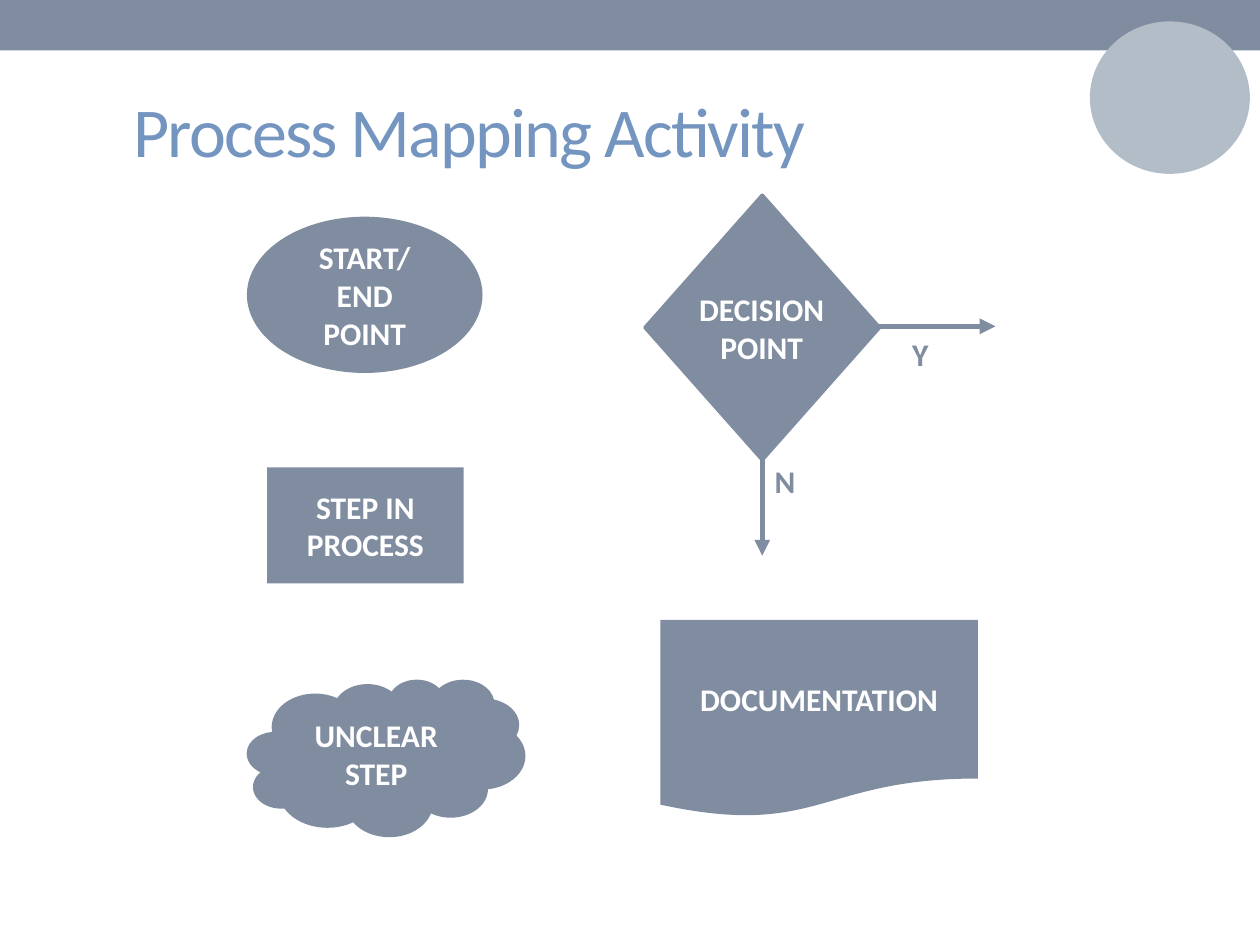
from pptx import Presentation
from pptx.dml.color import RGBColor
from pptx.enum.shapes import MSO_CONNECTOR, MSO_SHAPE
from pptx.enum.text import MSO_ANCHOR, PP_ALIGN
from pptx.oxml.ns import qn
from pptx.util import Inches, Pt
from lxml import etree

SLATE = RGBColor(0x80, 0x8D, 0xA0)
PALE_SLATE = RGBColor(0xB3, 0xBD, 0xC8)
TITLE_BLUE = RGBColor(0x75, 0x95, 0xC1)
WHITE = RGBColor(0xFF, 0xFF, 0xFF)
FONT = "Calibri"
LEFT, CENTER = PP_ALIGN.LEFT, PP_ALIGN.CENTER
TOP, MIDDLE = MSO_ANCHOR.TOP, MSO_ANCHOR.MIDDLE
RECTANGLE, OVAL = MSO_SHAPE.RECTANGLE, MSO_SHAPE.OVAL

# Preset, position and size in inches, label
PROCESS_SYMBOLS = [
    (OVAL, (1.96, 1.72, 1.87, 1.24), "START/ END POINT"),
    (RECTANGLE, (2.12, 3.71, 1.56, 0.92), "STEP IN PROCESS"),
    (MSO_SHAPE.CLOUD, (1.96, 5.39, 2.21, 1.25), "UNCLEAR STEP"),
    (MSO_SHAPE.FLOWCHART_DOCUMENT, (5.24, 4.92, 2.52, 1.57), "DOCUMENTATION"),
]


def inches(values):
    return [Inches(value) for value in values]


def write_text(shape, text, color, size=18, bold=True, align=CENTER, anchor=MIDDLE):
    frame = shape.text_frame
    frame.word_wrap = True
    frame.vertical_anchor = anchor
    para = frame.paragraphs[0]
    para.alignment = align
    span = para.add_run()
    span.text = text
    span.font.name = FONT
    span.font.size = Pt(size)
    span.font.bold = bold
    span.font.color.rgb = color
    return span


def add_symbol(page, preset, bounds, color=SLATE, label=None):
    symbol = page.shapes.add_shape(preset, *inches(bounds))
    symbol.shadow.inherit = False
    symbol.fill.solid()
    symbol.fill.fore_color.rgb = color
    symbol.line.fill.background()
    if label:
        write_text(symbol, label, WHITE)
    return symbol


def add_label(page, bounds, text, color, **style):
    box = page.shapes.add_textbox(*inches(bounds))
    return write_text(box, text, color, **style)


def add_arrow(page, start, end):
    arrow = page.shapes.add_connector(MSO_CONNECTOR.STRAIGHT, *inches(start + end))
    arrow.line.color.rgb = SLATE
    arrow.line.width = Pt(3)
    etree.SubElement(arrow.line._get_or_add_ln(), qn("a:tailEnd"), type="triangle")
    etree.SubElement(arrow._element.spPr, qn("a:effectLst"))


def add_title(page):
    span = add_label(page, (0.96, 0.49, 9, 1.08), "Process Mapping Activity",
                     TITLE_BLUE, size=40, bold=False, align=LEFT, anchor=MIDDLE)
    span.font._element.set("spc", "-100")


def add_decision(page):
    """Draw the decision diamond with its yes and no exits."""
    diamond = add_symbol(page, MSO_SHAPE.DIAMOND, (5.12, 1.55, 1.86, 2.1))
    diamond.line.color.rgb = SLATE
    diamond.line.width = Pt(2.08)
    add_label(page, (5.25, 2.25, 1.59, 0.71), "DECISION POINT", WHITE, anchor=TOP)
    add_arrow(page, (6.05, 3.62), (6.05, 4.41))
    add_arrow(page, (6.98, 2.59), (7.9, 2.59))
    for answer, left, top in (("N", 6.05, 3.62), ("Y", 7.14, 2.61)):
        add_label(page, (left, top, 0.8, 0.4), answer, SLATE, align=LEFT, anchor=TOP)


def main():
    deck = Presentation()
    deck.slide_width, deck.slide_height = inches((10, 7.5))
    page = deck.slides.add_slide(deck.slide_layouts[6])
    add_symbol(page, RECTANGLE, (0, 0, 10, 0.4))
    add_title(page)
    add_symbol(page, OVAL, (8.65, 0.17, 1.27, 1.21), PALE_SLATE)
    for preset, bounds, label in PROCESS_SYMBOLS:
        add_symbol(page, preset, bounds, label=label)
    add_decision(page)
    deck.save("out.pptx")


if __name__ == "__main__":
    main()
